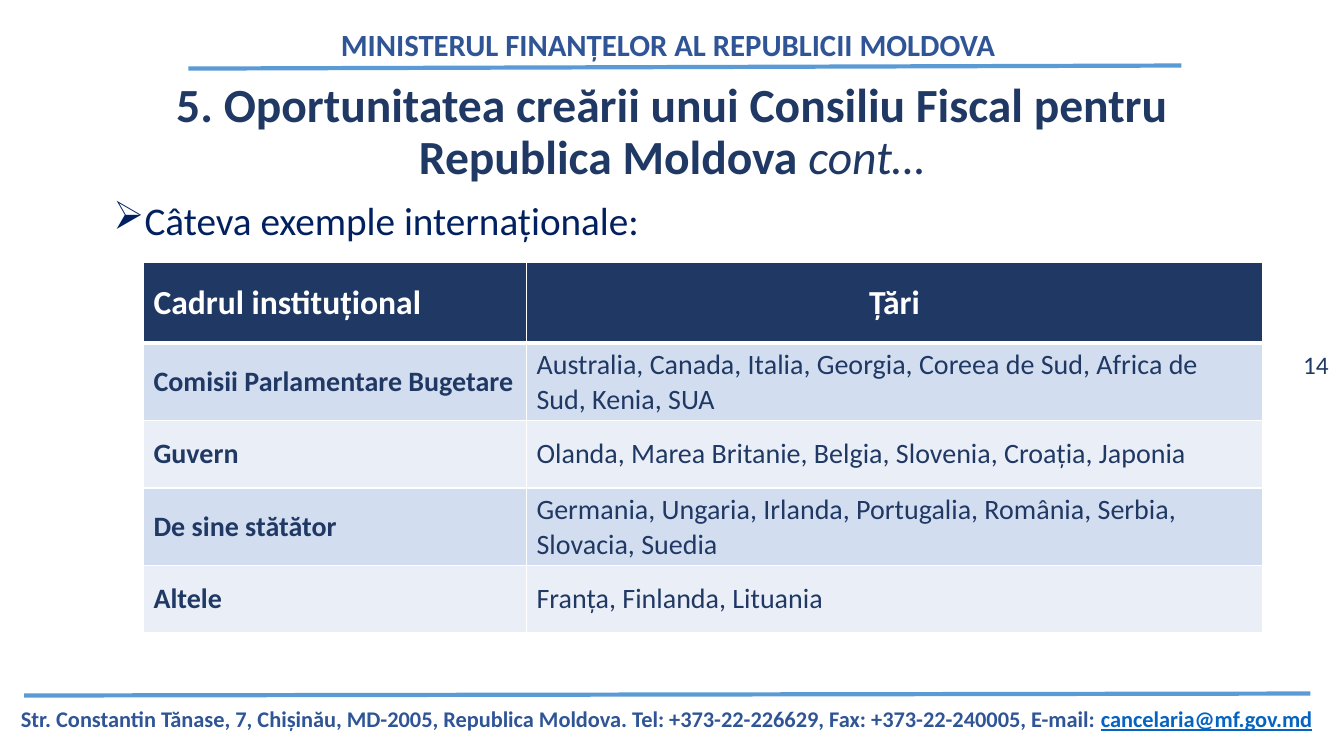
"""Builds the slide on international examples of fiscal councils."""
from dataclasses import dataclass

import lxml.etree
import pptx
import pptx.dml.color
import pptx.enum.shapes
import pptx.enum.text
import pptx.oxml.ns
import pptx.presentation
import pptx.slide
import pptx.table
import pptx.text.text
import pptx.util

Align = pptx.enum.text.PP_ALIGN
Anchor = pptx.enum.text.MSO_ANCHOR
AutoSize = pptx.enum.text.MSO_AUTO_SIZE


@dataclass(frozen=True)
class Theme:
    font: str = "Calibri"
    ministry: str = "2F5597"
    link: str = "0563C1"
    rule: str = "5B9BD5"
    navy: str = "203864"
    bullet: str = "002060"
    white: str = "FFFFFF"
    bands: tuple[str, str] = ("D2DEEF", "EAEFF7")
    title_size: float = 34
    bullet_size: float = 28
    header_size: float = 24
    ministry_size: float = 22
    body_size: float = 20
    number_size: float = 18
    footer_size: float = 16


THEME = Theme()


@dataclass(frozen=True)
class Span:
    text: str
    size: float
    color: str
    bold: bool = False
    italic: bool = False
    underline: bool = False


@dataclass(frozen=True)
class TextBlock:
    left: float
    top: float
    width: float
    height: float
    spans: tuple[Span, ...]
    align: Align = Align.CENTER
    anchor: Anchor = Anchor.TOP
    line_spacing: float = 1.0
    auto_size: AutoSize = AutoSize.NONE
    bullet: str = ""


@dataclass(frozen=True)
class Rule:
    start: tuple[float, float]
    end: tuple[float, float]


@dataclass(frozen=True)
class TableRow:
    framework: str
    countries: str
    height: float


TEXT_BLOCKS = (
    TextBlock(0, 497.5, 952.5, 28, (
        Span("Str. Constantin Tănase, 7, Chișinău, MD-2005, Republica Moldova. "
             "Tel: +373-22-226629, Fax: +373-22-240005, E-mail: ",
             THEME.footer_size, THEME.ministry, bold=True),
        Span("cancelaria@mf.gov.md", THEME.footer_size, THEME.link, bold=True, underline=True),
    ), line_spacing=1.15, auto_size=AutoSize.SHAPE_TO_FIT_TEXT),
    TextBlock(128, 11, 698.5, 36, (
        Span("MINISTERUL FINANȚELOR AL REPUBLICII MOLDOVA",
             THEME.ministry_size, THEME.ministry, bold=True),
    ), line_spacing=1.15, auto_size=AutoSize.SHAPE_TO_FIT_TEXT),
    TextBlock(921.5, 242, 37, 37, (Span("14", THEME.number_size, THEME.navy),),
              anchor=Anchor.MIDDLE),
    TextBlock(66, 67.7, 828, 55, (
        Span("5. Oportunitatea creării unui Consiliu Fiscal pentru Republica Moldova ",
             THEME.title_size, THEME.navy, bold=True),
        Span("cont…", THEME.title_size, THEME.navy, italic=True),
    ), anchor=Anchor.MIDDLE, line_spacing=0.9),
    TextBlock(74, 140.4, 786, 38, (
        Span("Câteva exemple internaționale:", THEME.bullet_size, THEME.bullet),
    ), align=Align.LEFT, line_spacing=0.9, auto_size=AutoSize.SHAPE_TO_FIT_TEXT, bullet="➢"),
)

RULES = (Rule((134.6, 49), (843.8, 46.8)), Rule((17.3, 496.8), (936, 495.4)))

TABLE_ROWS = (
    TableRow("Cadrul instituțional", "Țări", 57.6),
    TableRow("Comisii Parlamentare Bugetare",
             "Australia, Canada, Italia, Georgia, Coreea de Sud, Africa de Sud, Kenia, SUA", 53.3),
    TableRow("Guvern", "Olanda, Marea Britanie, Belgia, Slovenia, Croația, Japonia", 48.2),
    TableRow("De sine stătător",
             "Germania, Ungaria, Irlanda, Portugalia, România, Serbia, Slovacia, Suedia", 48.2),
    TableRow("Altele", "Franța, Finlanda, Lituania", 48.2),
)
COLUMN_WIDTHS = (273.6, 525.6)


def rgb(color: str) -> pptx.dml.color.RGBColor:
    return pptx.dml.color.RGBColor.from_string(color)


def write_spans(paragraph: pptx.text.text._Paragraph, spans: tuple[Span, ...]) -> None:
    paragraph.text = spans[0].text
    for span in spans[1:]:
        paragraph.add_run().text = span.text
    for run, span in zip(paragraph.runs, spans):
        run.font.name = THEME.font
        run.font.size = pptx.util.Pt(span.size)
        run.font.color.rgb = rgb(span.color)
        run.font.bold = span.bold
        run.font.italic = span.italic
        run.font.underline = span.underline


def add_bullet(paragraph: pptx.text.text._Paragraph, symbol: str) -> None:
    properties = paragraph._p.get_or_add_pPr()
    indent = pptx.util.Pt(18)
    properties.set("marL", str(indent))
    properties.set("indent", str(-indent))
    lxml.etree.SubElement(properties, pptx.oxml.ns.qn("a:buChar"), char=symbol)


def add_text_block(slide: pptx.slide.Slide, block: TextBlock) -> None:
    bounds = map(pptx.util.Pt, (block.left, block.top, block.width, block.height))
    text_frame = slide.shapes.add_textbox(*bounds).text_frame
    text_frame.word_wrap = True
    text_frame.auto_size = block.auto_size
    text_frame.vertical_anchor = block.anchor
    paragraph = text_frame.paragraphs[0]
    if block.bullet:
        add_bullet(paragraph, block.bullet)
    paragraph.alignment = block.align
    paragraph.line_spacing = block.line_spacing
    write_spans(paragraph, block.spans)


def add_rule(slide: pptx.slide.Slide, rule: Rule) -> None:
    ends = map(pptx.util.Pt, (*rule.start, *rule.end))
    connector = slide.shapes.add_connector(pptx.enum.shapes.MSO_CONNECTOR.STRAIGHT, *ends)
    connector.line.color.rgb = rgb(THEME.rule)
    connector.line.width = pptx.util.Pt(3)
    lxml.etree.SubElement(connector._element.spPr, pptx.oxml.ns.qn("a:effectLst"))


def add_border(cell: pptx.table._Cell, side: str, width: float) -> None:
    qn = pptx.oxml.ns.qn
    line = lxml.etree.SubElement(cell._tc.get_or_add_tcPr(), qn(f"a:ln{side}"),
                                 w=str(pptx.util.Pt(width)))
    fill = lxml.etree.SubElement(line, qn("a:solidFill"))
    lxml.etree.SubElement(fill, qn("a:srgbClr"), val=THEME.white)


def style_cell(cell: pptx.table._Cell, span: Span, fill: str, align: Align,
               top_border: float, bottom_border: float) -> None:
    for side, width in zip("LRTB", (1, 1, top_border, bottom_border)):
        add_border(cell, side, width)
    cell.fill.solid()
    cell.fill.fore_color.rgb = rgb(fill)
    cell.vertical_anchor = Anchor.MIDDLE
    paragraph = cell.text_frame.paragraphs[0]
    paragraph.alignment = align
    write_spans(paragraph, (span,))


def add_country_table(slide: pptx.slide.Slide) -> None:
    height = sum(row.height for row in TABLE_ROWS)
    bounds = map(pptx.util.Pt, (102.5, 187.5, sum(COLUMN_WIDTHS), height))
    table = slide.shapes.add_table(len(TABLE_ROWS), len(COLUMN_WIDTHS), *bounds).table
    for column, width in zip(table.columns, COLUMN_WIDTHS):
        column.width = pptx.util.Pt(width)
    for index, row in enumerate(TABLE_ROWS):
        table.rows[index].height = pptx.util.Pt(row.height)
        header = index == 0
        size = THEME.header_size if header else THEME.body_size
        color = THEME.white if header else THEME.navy
        fill = THEME.navy if header else THEME.bands[(index - 1) % 2]
        for column, text in enumerate((row.framework, row.countries)):
            span = Span(text, size, color, bold=header or column == 0)
            align = Align.CENTER if header and column == 1 else Align.LEFT
            style_cell(table.cell(index, column), span, fill, align,
                       3 if index == 1 else 1, 3 if header else 1)


def main() -> None:
    presentation = pptx.Presentation()
    presentation.slide_width = pptx.util.Pt(960)
    presentation.slide_height = pptx.util.Pt(540)
    slide = presentation.slides.add_slide(presentation.slide_layouts[6])
    for rule in RULES:
        add_rule(slide, rule)
    for block in TEXT_BLOCKS:
        add_text_block(slide, block)
    add_country_table(slide)
    presentation.save("out.pptx")


if __name__ == "__main__":
    main()
